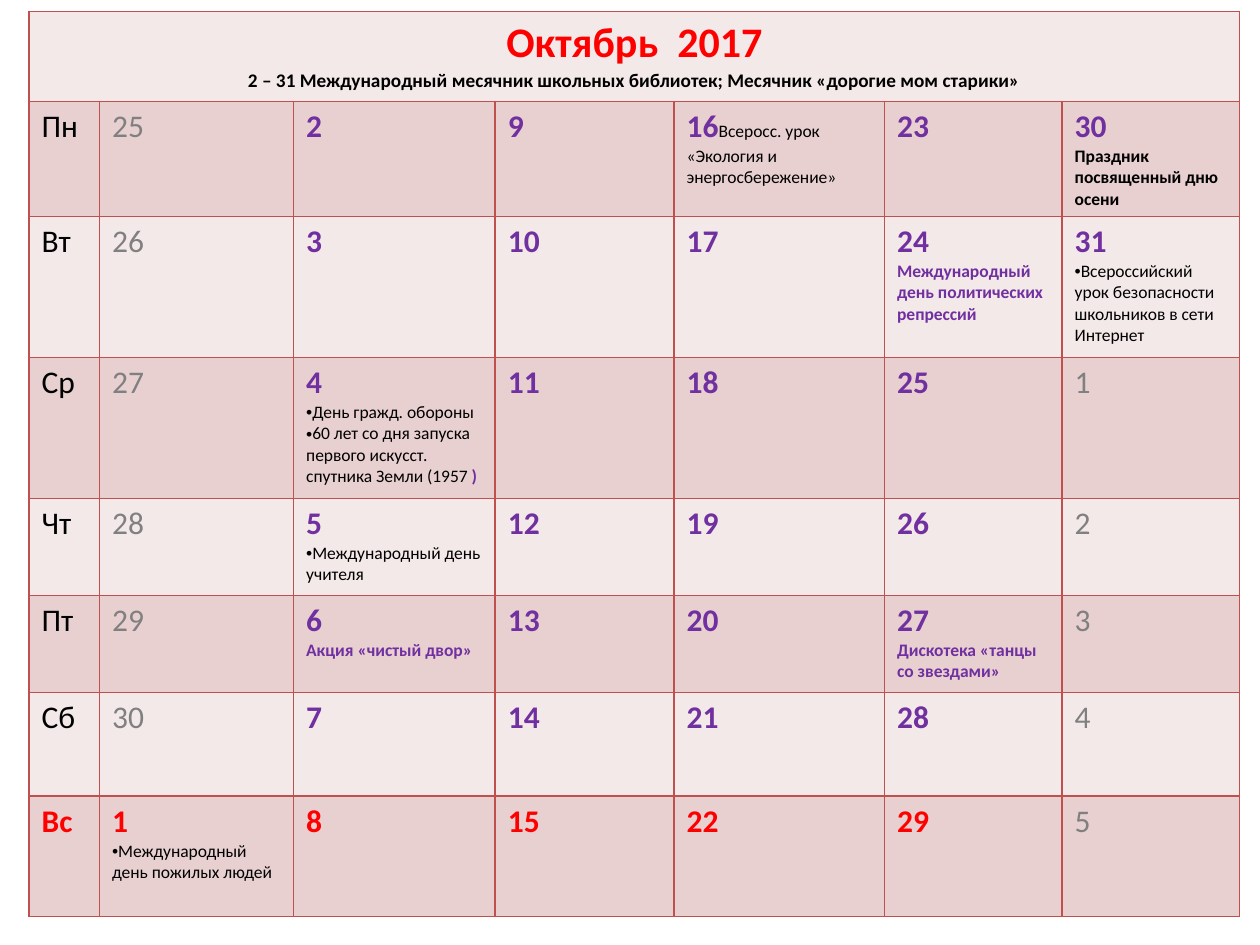
from typing import NamedTuple

from lxml.etree import SubElement as Sub
from pptx import Presentation as Deck
from pptx.dml.color import RGBColor as Rgb
from pptx.enum.text import PP_ALIGN as Align
from pptx.oxml.ns import qn
from pptx.util import Pt

INK = {
    "line": "C0504D", "light": "F4E9E9", "dark": "E8D0D0", "black": "000000",
    "red": "FF0000", "gray": "808080", "plum": "7030A0",
}
FONT = "Calibri"
WIDTHS = [40.3, 110.9, 115.2, 102.2, 120.3, 101.5, 101.5]
HEIGHTS = [51.5, 65.7, 80.6, 80.6, 55.4, 55.4, 59.2, 69]
DAYS = ["Пн", "Вт", "Ср", "Чт", "Пт", "Сб", "Вс"]
START, SEPT, OCT = 25, 30, 31


class Note(NamedTuple):
    text: str
    ink: str = "black"
    bold: bool = False
    dot: bool = False
    join: bool = False


NOTES = {
    1: [Note("Международный день пожилых людей", dot=True)],
    4: [
        Note("День гражд. обороны", dot=True),
        Note("60 лет со дня запуска первого искусст. спутника Земли (1957 ", dot=True),
        Note(")", "plum", True, join=True),
    ],
    5: [Note("Международный день учителя", dot=True)],
    6: [Note("Акция «чистый двор»", "plum", True)],
    16: [Note("Всеросс. урок «Экология и энергосбережение»", join=True)],
    24: [Note("Международный день политических репрессий", "plum", True)],
    27: [Note("Дискотека «танцы со звездами»", "plum", True)],
    30: [Note("Праздник посвященный дню осени", bold=True)],
    31: [Note("Всероссийский урок безопасности школьников в сети Интернет", dot=True)],
}


def write(cell, text: str, *, size: float = 18, ink: str = "black", bold: bool = False,
          dot: bool = False, join: bool = False, align=Align.LEFT) -> None:
    frame = cell.text_frame
    para = frame.paragraphs[-1]
    if para.runs and not join:
        para = frame.add_paragraph()
    if not join:
        para.alignment = align
    if dot:
        props = para._p.get_or_add_pPr()
        Sub(props, qn("a:buFont"), typeface="Arial")
        Sub(props, qn("a:buChar"), char="•")
    run = para.add_run()
    run.text = text
    font = run.font
    font.name, font.size, font.bold = FONT, Pt(size), bold
    font.color.rgb = Rgb.from_string(INK[ink])


def paint(cell, fill: str) -> None:
    props = cell._tc.get_or_add_tcPr()
    for side in ("L", "R", "T", "B"):
        line = Sub(props, qn(f"a:ln{side}"), w=str(Pt(1)))
        solid = Sub(line, qn("a:solidFill"))
        Sub(solid, qn("a:srgbClr"), val=INK["line"])
    cell.fill.solid()
    cell.fill.fore_color.rgb = Rgb.from_string(INK[fill])


def mark(cell, row: int, week: int) -> None:
    count = START + row + 7 * week
    day = count - SEPT
    if day < 1:
        write(cell, str(count), ink="gray")
    elif day > OCT:
        write(cell, str(day - OCT), ink="gray")
    else:
        write(cell, str(day), ink="red" if row == 6 else "plum", bold=True)
        for note in NOTES.get(day, []):
            write(cell, size=10, **note._asdict())


def main() -> None:
    deck = Deck()
    deck.slide_width, deck.slide_height = Pt(720), Pt(540)
    slide = deck.slides.add_slide(deck.slide_layouts[6])
    table = slide.shapes.add_table(
        len(HEIGHTS), len(WIDTHS), Pt(16.6), Pt(6.5),
        Pt(sum(WIDTHS)), Pt(sum(HEIGHTS))).table
    table.horz_banding = False
    table.first_row = False
    for col, width in zip(table.columns, WIDTHS):
        col.width = Pt(width)
    for index, (row, height) in enumerate(zip(table.rows, HEIGHTS)):
        row.height = Pt(height)
        for cell in row.cells:
            paint(cell, "dark" if index % 2 else "light")

    head = table.cell(0, 0)
    head.merge(table.cell(0, len(WIDTHS) - 1))
    write(head, "Октябрь  2017", size=24, ink="red", bold=True, align=Align.CENTER)
    write(head, "2 – 31 Международный месячник школьных библиотек; "
          "Месячник «дорогие мом старики»", size=11, bold=True, align=Align.CENTER)

    for row, name in enumerate(DAYS):
        rest = name == "Вс"
        write(table.cell(row + 1, 0), name, ink="red" if rest else "black", bold=rest)
        for week in range(6):
            mark(table.cell(row + 1, week + 1), row, week)
    deck.save("out.pptx")


if __name__ == "__main__":
    main()
